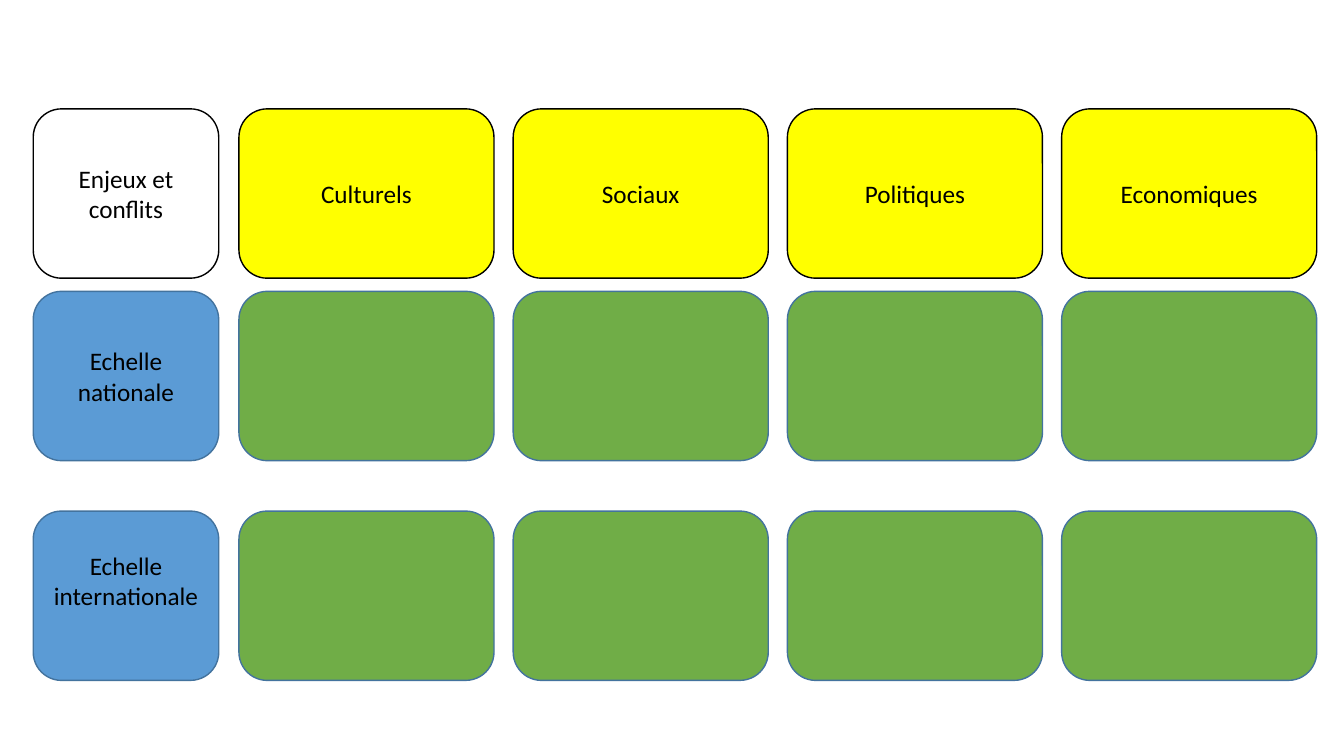
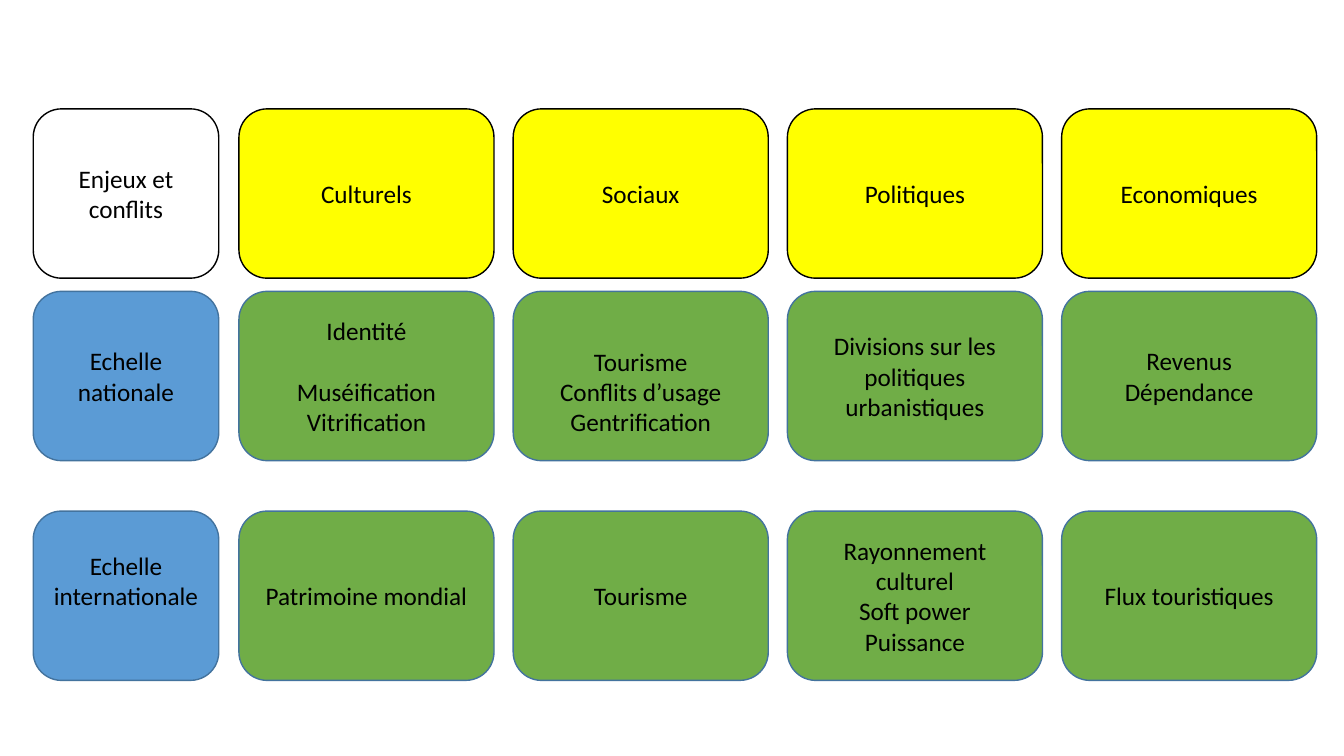
"""Build two grids of stakes and conflicts, one blank and one filled in."""
from dataclasses import dataclass

from pptx import Presentation
from pptx.dml.color import RGBColor
from pptx.enum.shapes import MSO_SHAPE
from pptx.enum.text import MSO_ANCHOR, PP_ALIGN
from pptx.util import Inches, Pt

ROUNDED = MSO_SHAPE.ROUNDED_RECTANGLE
MIDDLE = MSO_ANCHOR.MIDDLE
CENTER = PP_ALIGN.CENTER


@dataclass(frozen=True)
class Theme:
    font: str = "Calibri"
    size: int = 18
    line_height: float = 22
    line_width: float = 1
    text: str = "000000"
    corner: tuple = ("FFFFFF", "000000")
    heading: tuple = ("FFFF00", "000000")
    scale: tuple = ("5B9BD5", "43739E")
    content: tuple = ("70AD47", "43739E")


@dataclass(frozen=True)
class Cell:
    lines: tuple = ()
    gap_after_first: bool = False
    space_above: int = 0
    space_below: int = 0


HEADINGS = [Cell((text,)) for text in ("Culturels", "Sociaux", "Politiques", "Economiques")]
CORNER = Cell(("Enjeux et conflits",))
SCALES = [
    Cell(("Echelle nationale",)),
    Cell(("Echelle internationale",), space_below=1),
]
BLANK_ROWS = [[Cell()] * len(HEADINGS)] * len(SCALES)
ANSWER_ROWS = [
    [
        Cell(("Identité", "Muséification", "Vitrification"), gap_after_first=True),
        Cell(("Tourisme", "Conflits d’usage Gentrification"), space_above=1),
        Cell(("Divisions sur les politiques urbanistiques",)),
        Cell(("Revenus", "Dépendance")),
    ],
    [
        Cell(("Patrimoine mondial",)),
        Cell(("Tourisme",)),
        Cell(("Rayonnement culturel", "Soft power", "Puissance")),
        Cell(("Flux touristiques",)),
    ],
]

ROW_TOPS = (1.08, 2.89, 5.07)
ROW_HEIGHT = 1.68
SCALE_LEFT, SCALE_WIDTH = 0.33, 1.84
CONTENT_LEFT, CONTENT_WIDTH, CONTENT_GAP = 2.37, 2.53, 0.19
INSET = 0.05


class GridDeck:
    def __init__(self, theme):
        self.theme = theme
        self.presentation = Presentation()
        self.presentation.slide_width = Inches(13.33)
        self.presentation.slide_height = Inches(7.5)
        self.slide = None

    def add_slide(self):
        self.slide = self.presentation.slides.add_slide(self.presentation.slide_layouts[6])

    def add_box(self, left, top, width, cell, colors):
        fill, outline = colors
        shape = self.slide.shapes.add_shape(
            ROUNDED, Inches(left), Inches(top), Inches(width), Inches(ROW_HEIGHT)
        )
        shape.shadow.inherit = False
        shape.fill.solid()
        shape.fill.fore_color.rgb = RGBColor.from_string(fill)
        shape.line.color.rgb = RGBColor.from_string(outline)
        shape.line.width = Pt(self.theme.line_width)
        if cell.lines:
            self.add_text(shape.text_frame, cell)

    def add_text(self, frame, cell):
        line_height = Pt(self.theme.line_height)
        frame.word_wrap = True
        frame.vertical_anchor = MIDDLE
        frame.margin_top = Inches(INSET) + cell.space_above * line_height
        frame.margin_bottom = Inches(INSET) + cell.space_below * line_height
        for index, text in enumerate(cell.lines):
            paragraph = frame.add_paragraph() if index else frame.paragraphs[0]
            paragraph.alignment = CENTER
            if index == 1 and cell.gap_after_first:
                paragraph.space_before = line_height
            run = paragraph.add_run()
            run.text = text
            run.font.name = self.theme.font
            run.font.size = Pt(self.theme.size)
            run.font.color.rgb = RGBColor.from_string(self.theme.text)

    def add_row(self, top, label, cells, label_colors, cell_colors):
        self.add_box(SCALE_LEFT, top, SCALE_WIDTH, label, label_colors)
        for column, cell in enumerate(cells):
            left = CONTENT_LEFT + column * (CONTENT_WIDTH + CONTENT_GAP)
            self.add_box(left, top, CONTENT_WIDTH, cell, cell_colors)

    def add_grid(self, rows):
        theme = self.theme
        self.add_slide()
        self.add_row(ROW_TOPS[0], CORNER, HEADINGS, theme.corner, theme.heading)
        for top, scale, cells in zip(ROW_TOPS[1:], SCALES, rows):
            self.add_row(top, scale, cells, theme.scale, theme.content)


def main():
    deck = GridDeck(Theme())
    for rows in (BLANK_ROWS, ANSWER_ROWS):
        deck.add_grid(rows)
    deck.presentation.save("out.pptx")


if __name__ == "__main__":
    main()
